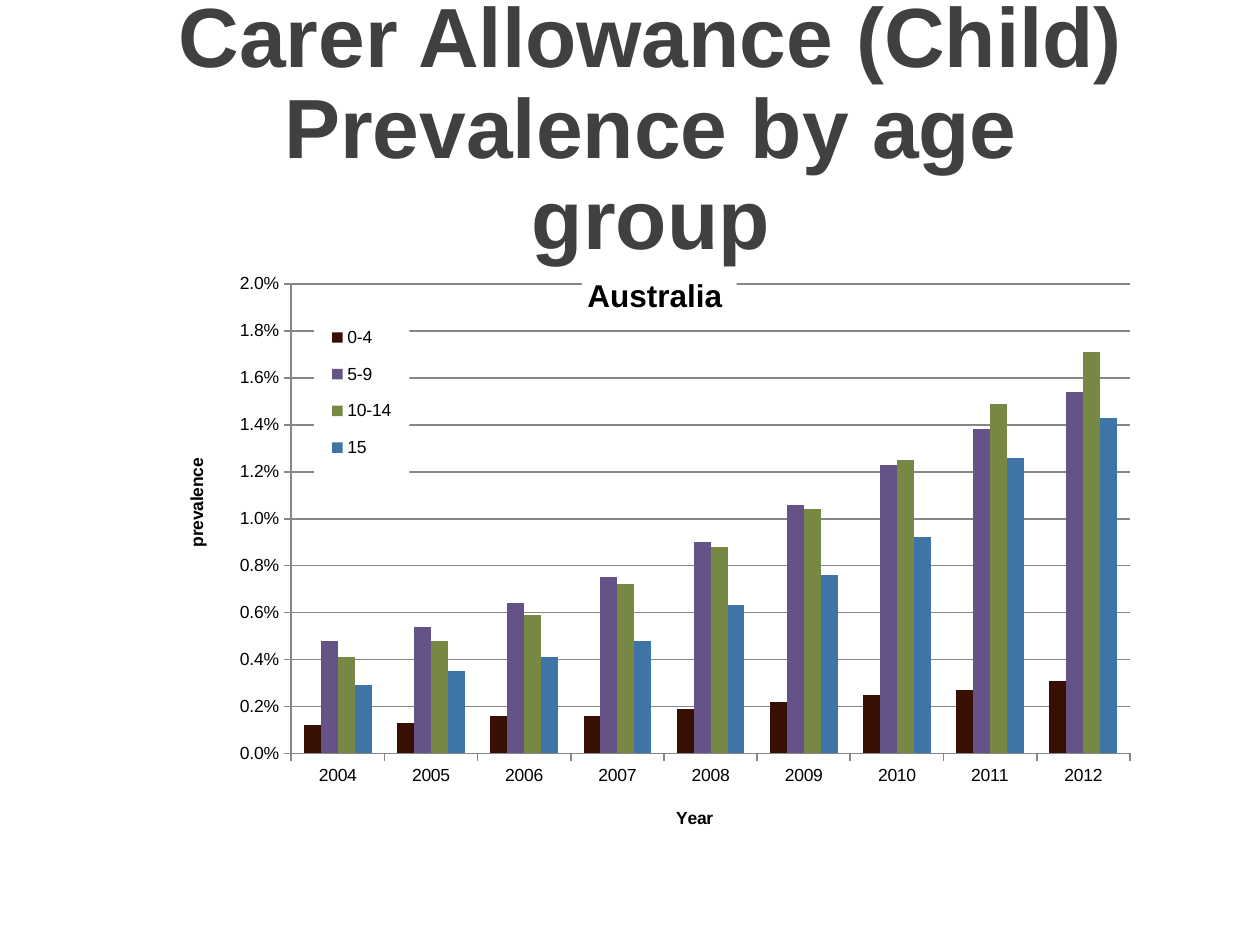
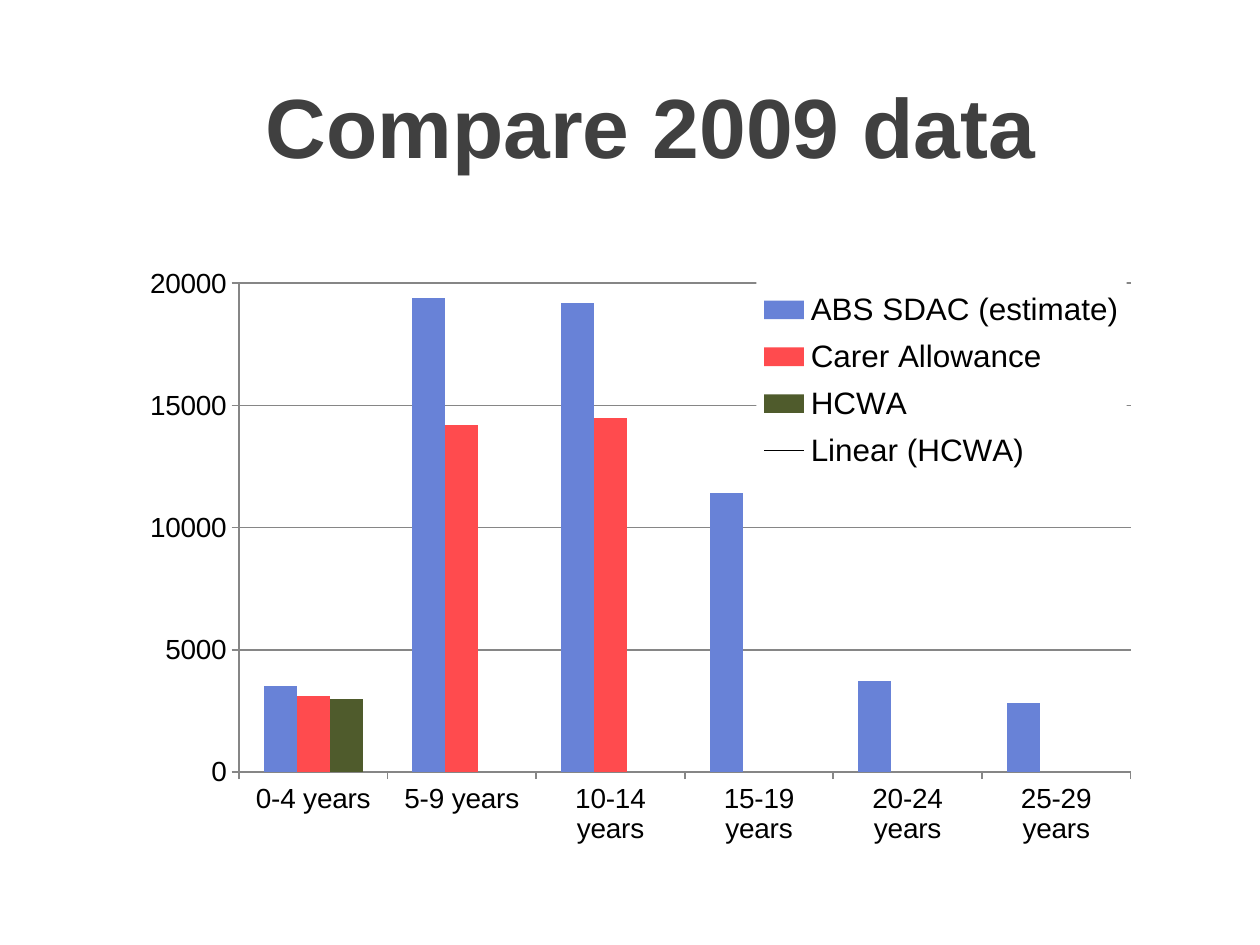
from lxml.etree import SubElement
from pptx import Presentation
from pptx.chart.data import CategoryChartData
from pptx.dml.color import RGBColor
from pptx.enum.chart import XL_CHART_TYPE, XL_LEGEND_POSITION, XL_TICK_MARK
from pptx.enum.text import MSO_ANCHOR, PP_ALIGN
from pptx.oxml import parse_xml
from pptx.oxml.ns import nsdecls, qn
from pptx.util import Pt

# Shared look
FONT = "Arial"
COLORS = {"title": "404040", "text": "000000", "grid": "868686", "back": "FFFFFF"}
TITLE_BOX = (85.7, 21.6, 572.4, 105.1)

# Content: layouts are fractions of the chart area (x, y, width, height)
SLIDES = [
    {
        "title": ["Carer Allowance (Child)", "Prevalence by age group"],
        "box": (92.2, 141.8, 566.6, 340.6),
        "cats": [str(year) for year in range(2004, 2013)],
        "series": [
            ("0-4", "390E03", [0.0012, 0.0013, 0.0016, 0.0016, 0.0019, 0.0022, 0.0025, 0.0027, 0.0031]),
            ("5-9", "655287", [0.0048, 0.0054, 0.0064, 0.0075, 0.009, 0.0106, 0.0123, 0.0138, 0.0154]),
            ("10-14", "768843", [0.0041, 0.0048, 0.0059, 0.0072, 0.0088, 0.0104, 0.0125, 0.0149, 0.0171]),
            ("15", "3F75A6", [0.0029, 0.0035, 0.0041, 0.0048, 0.0063, 0.0076, 0.0092, 0.0126, 0.0143]),
        ],
        "scale": (0.02, 0.002, "0.0%"),
        "sizes": {"axis": 10, "legend": 10},
        "plot": (0.131, 0.06, 0.846, 0.788),
        "legend": (0.154, 0.105, 0.096, 0.275),
        "chart_title": ("Australia ", (0.424, 0.035)),
        "cat_title": ("Year", (0.516, 0.931)),
        "val_title": ("prevalence", (0.021, 0.347)),
    },
    {
        "title": ["Compare 2009 data"],
        "box": (85.7, 141.8, 572.4, 340.6),
        "cats": [f"{age}-{age + 4} years" for age in range(0, 30, 5)],
        "series": [
            ("ABS SDAC (estimate)", "6882D7", [3500, 19400, 19200, 11400, 3700, 2800]),
            ("Carer Allowance", "FF4B4E", [3100, 14200, 14500, None, None, None]),
            ("HCWA", "4F5B2C", [3000, None, None, None, None, None]),
        ],
        "scale": (20000, 5000, "General"),
        "sizes": {"axis": 16, "legend": 18},
        "plot": (0.088, 0.06, 0.891, 0.832),
        "legend": (0.605, 0.055, 0.37, 0.34),
        "trend": "HCWA",
    },
]


def rgb(name):
    return RGBColor.from_string(COLORS.get(name, name))


# XML helpers
def layout_xml(box, inner=False):
    layout = parse_xml(f"<c:layout {nsdecls('c')}/>")
    manual = SubElement(layout, qn("c:manualLayout"))
    if inner:
        SubElement(manual, qn("c:layoutTarget")).set("val", "inner")
    for tag in ("xMode", "yMode"):
        SubElement(manual, qn(f"c:{tag}")).set("val", "edge")
    for tag, value in zip("xywh", box):
        SubElement(manual, qn(f"c:{tag}")).set("val", str(value))
    return layout


def drop_layout(el):
    for old in el.findall(qn("c:layout")):
        el.remove(old)


def place(el, box, filled=False):
    """Put a legend or title at a fixed spot, on white if filled."""
    drop_layout(el)
    overlay = el.find(qn("c:overlay"))
    overlay.addprevious(layout_xml(box))
    if filled:
        overlay.set("val", "1")
        overlay.addnext(parse_xml(
            f'<c:spPr {nsdecls("c", "a")}><a:solidFill><a:srgbClr val="{COLORS["back"]}"/>'
            "</a:solidFill><a:ln><a:noFill/></a:ln></c:spPr>"))


def add_trend(series):
    series._element.find(qn("c:cat")).addprevious(parse_xml(
        f'<c:trendline {nsdecls("c", "a")}><c:spPr><a:ln w="9525"><a:solidFill>'
        f'<a:srgbClr val="{COLORS["text"]}"/></a:solidFill></a:ln></c:spPr>'
        '<c:trendlineType val="linear"/><c:dispRSqr val="0"/><c:dispEq val="0"/></c:trendline>'))


# Text
def style(font, size, color="text", bold=False):
    font.name, font.size, font.bold = FONT, Pt(size), bold
    font.color.rgb = rgb(color)


def add_title(s, lines):
    tf = s.shapes.add_textbox(*map(Pt, TITLE_BOX)).text_frame
    tf.word_wrap = True
    tf.vertical_anchor = MSO_ANCHOR.MIDDLE
    p = tf.paragraphs[0]
    p.alignment, p.line_spacing = PP_ALIGN.CENTER, Pt(52)
    for i, line in enumerate(lines):
        if i:
            p.add_line_break()
        r = p.add_run()
        r.text = line
        style(r.font, 48, "title", True)


def set_chart_text(title, text, spot, size, filled=False, rotated=False):
    tf = title.text_frame
    r = tf.paragraphs[0].add_run()
    r.text = text
    style(r.font, size, bold=True)
    if rotated:
        body = title._element.find(".//" + qn("a:bodyPr"))
        body.set("rot", "-5400000")
        body.set("vert", "horz")
    place(title._element, spot, filled)


# Chart
def add_column_chart(s, spec):
    top, step, number_format = spec["scale"]
    data = CategoryChartData(number_format=number_format)
    data.categories = spec["cats"]
    for name, _, values in spec["series"]:
        data.add_series(name, values)
    chart = s.shapes.add_chart(
        XL_CHART_TYPE.COLUMN_CLUSTERED, *map(Pt, spec["box"]), data).chart
    style(chart.font, 10)

    plot = chart.plots[0]
    plot.gap_width, plot.overlap, plot.vary_by_categories = 150, 0, False
    for series, (name, color, _) in zip(plot.series, spec["series"]):
        series.format.fill.solid()
        series.format.fill.fore_color.rgb = rgb(color)
        series.invert_if_negative = False
        if name == spec.get("trend"):
            add_trend(series)

    # Axes
    cat_axis, val_axis = chart.category_axis, chart.value_axis
    val_axis.minimum_scale, val_axis.maximum_scale, val_axis.major_unit = 0, top, step
    val_axis.has_major_gridlines = True
    for axis in (cat_axis, val_axis):
        axis.major_tick_mark, axis.minor_tick_mark = XL_TICK_MARK.OUTSIDE, XL_TICK_MARK.NONE
        style(axis.tick_labels.font, spec["sizes"]["axis"])
    val_axis.tick_labels.number_format = number_format
    val_axis.tick_labels.number_format_is_linked = False
    for part in (cat_axis, val_axis, val_axis.major_gridlines):
        part.format.line.color.rgb = rgb("grid")
        part.format.line.width = Pt(1)

    # Titles
    chart.has_title = "chart_title" in spec
    if chart.has_title:
        set_chart_text(chart.chart_title, *spec["chart_title"], 18, filled=True)
    for axis, key in ((cat_axis, "cat_title"), (val_axis, "val_title")):
        if key in spec:
            set_chart_text(axis.axis_title, *spec[key], 10, rotated=axis is val_axis)

    # Legend and plot area
    chart.has_legend = True
    legend = chart.legend
    legend.position, legend.include_in_layout = XL_LEGEND_POSITION.RIGHT, True
    style(legend.font, spec["sizes"]["legend"])
    place(legend._element, spec["legend"], filled=True)
    area = chart._chartSpace.find(".//" + qn("c:plotArea"))
    drop_layout(area)
    area.insert(0, layout_xml(spec["plot"], inner=True))


def main():
    prs = Presentation()
    prs.slide_width, prs.slide_height = Pt(720), Pt(540)
    for spec in SLIDES:
        s = prs.slides.add_slide(prs.slide_layouts[6])
        add_title(s, spec["title"])
        add_column_chart(s, spec)
    prs.save("out.pptx")


if __name__ == "__main__":
    main()
